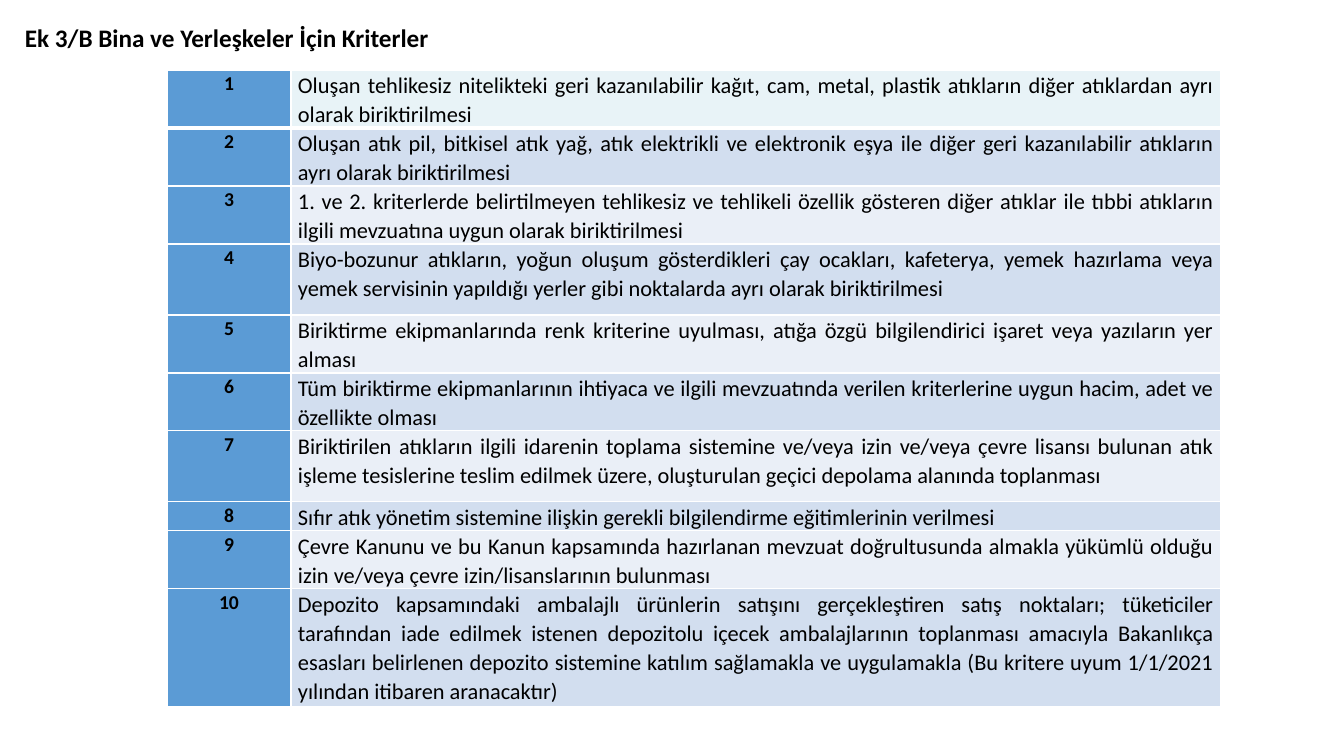
from lxml import etree
from pptx import Presentation
from pptx import util as u
from pptx.dml.color import RGBColor
from pptx.enum import text
from pptx.oxml.ns import qn

PX = u.Inches(1) / 100.8
COLORS = {"ink": "000000", "line": "FFFFFF", "number": "5B9BD5",
          "first": "E8F3F7", "dark": "D2DEEF", "light": "EAEFF7"}
LINE_H = 29  # height of one text line in the table
CELL_PAD = 7

# Criterion text and row height
CRITERIA = [
    ("Oluşan tehlikesiz nitelikteki geri kazanılabilir kağıt, cam, metal, plastik "
     "atıkların diğer atıklardan ayrı olarak biriktirilmesi", 2 * LINE_H),
    ("Oluşan atık pil, bitkisel atık yağ, atık elektrikli ve elektronik eşya ile "
     "diğer geri kazanılabilir atıkların ayrı olarak biriktirilmesi", 2 * LINE_H),
    ("1. ve 2. kriterlerde belirtilmeyen tehlikesiz ve tehlikeli özellik gösteren "
     "diğer atıklar ile tıbbi atıkların ilgili mevzuatına uygun olarak "
     "biriktirilmesi", 2 * LINE_H),
    ("Biyo-bozunur atıkların, yoğun oluşum gösterdikleri çay ocakları, kafeterya, "
     "yemek hazırlama veya yemek servisinin yapıldığı yerler gibi noktalarda ayrı "
     "olarak biriktirilmesi", 71),
    ("Biriktirme ekipmanlarında renk kriterine uyulması, atığa özgü bilgilendirici "
     "işaret veya yazıların yer alması", 2 * LINE_H),
    ("Tüm biriktirme ekipmanlarının ihtiyaca ve ilgili mevzuatında verilen "
     "kriterlerine uygun hacim, adet ve özellikte olması", 2 * LINE_H),
    ("Biriktirilen atıkların ilgili idarenin toplama sistemine ve/veya izin ve/veya "
     "çevre lisansı bulunan atık işleme tesislerine teslim edilmek üzere, "
     "oluşturulan geçici depolama alanında toplanması", 71),
    ("Sıfır atık yönetim sistemine ilişkin gerekli bilgilendirme eğitimlerinin "
     "verilmesi", LINE_H),
    ("Çevre Kanunu ve bu Kanun kapsamında hazırlanan mevzuat doğrultusunda almakla "
     "yükümlü olduğu izin ve/veya çevre izin/lisanslarının bulunması", 2 * LINE_H),
    ("Depozito kapsamındaki ambalajlı ürünlerin satışını gerçekleştiren satış "
     "noktaları; tüketiciler tarafından iade edilmek istenen depozitolu içecek "
     "ambalajlarının toplanması amacıyla Bakanlıkça esasları belirlenen depozito "
     "sistemine katılım sağlamakla ve uygulamakla (Bu kritere uyum 1/1/2021 "
     "yılından itibaren aranacaktır)", 118),
]


def px(n):
    return u.Emu(round(n * PX))


def write(tf, words, size, bold=False, align="LEFT", spacing=1.0, after=0):
    p = tf.paragraphs[0]
    p.alignment = getattr(text.PP_ALIGN, align)
    p.line_spacing = spacing
    p.space_after = u.Pt(after)
    r = p.add_run()
    r.text = words
    r.font.name = "Calibri"
    r.font.size = u.Pt(size)
    r.font.bold = bold
    r.font.color.rgb = RGBColor.from_string(COLORS["ink"])


def add_borders(cell, **widths):
    tc_pr = cell._tc.get_or_add_tcPr()
    for side in "LRTB":
        ln = etree.SubElement(tc_pr, qn(f"a:ln{side}"),
                              w=str(u.Pt(widths.get(side, 1))))
        fill = etree.SubElement(ln, qn("a:solidFill"))
        etree.SubElement(fill, qn("a:srgbClr"), val=COLORS["line"])


def format_cell(cell, color, **widths):
    cell.margin_left = cell.margin_right = px(CELL_PAD)
    cell.margin_top = cell.margin_bottom = 0
    add_borders(cell, **widths)
    cell.fill.solid()
    cell.fill.fore_color.rgb = RGBColor.from_string(COLORS[color])


def add_title(slide, x, y, w, h):
    tf = slide.shapes.add_textbox(px(x), px(y), px(w), px(h)).text_frame
    tf.word_wrap = True
    tf.vertical_anchor = text.MSO_ANCHOR.MIDDLE
    write(tf, "Ek 3/B Bina ve Yerleşkeler İçin Kriterler", 18, bold=True, spacing=0.9)


def add_criteria(slide, x, y, w, number_w):
    total = sum(h for _, h in CRITERIA)
    table = slide.shapes.add_table(len(CRITERIA), 2, px(x), px(y),
                                   px(w), px(total)).table
    table.columns[0].width = px(number_w)
    table.columns[1].width = px(w - number_w)
    for i, (words, height) in enumerate(CRITERIA):
        table.rows[i].height = px(height)
        number, body = table.rows[i].cells
        # A thick line parts the first row from the rest
        widths = {0: {"B": 3}, 1: {"T": 3}}.get(i, {})
        band = "first" if i == 0 else "dark" if i % 2 else "light"
        format_cell(number, "number", **widths)
        format_cell(body, band, **widths)
        write(number.text_frame, str(i + 1), 14, bold=True, align="CENTER",
              spacing=1.07, after=8)
        write(body.text_frame, words, 16, align="JUSTIFY", spacing=1.07, after=8)


def main():
    prs = Presentation()
    prs.slide_width, prs.slide_height = px(1344), px(756)
    slide = prs.slides.add_slide(prs.slide_layouts[6])
    add_title(slide, 15, 17, 593, 44)
    add_criteria(slide, 167, 70, 1054, 124)
    prs.save("out.pptx")


if __name__ == "__main__":
    main()
